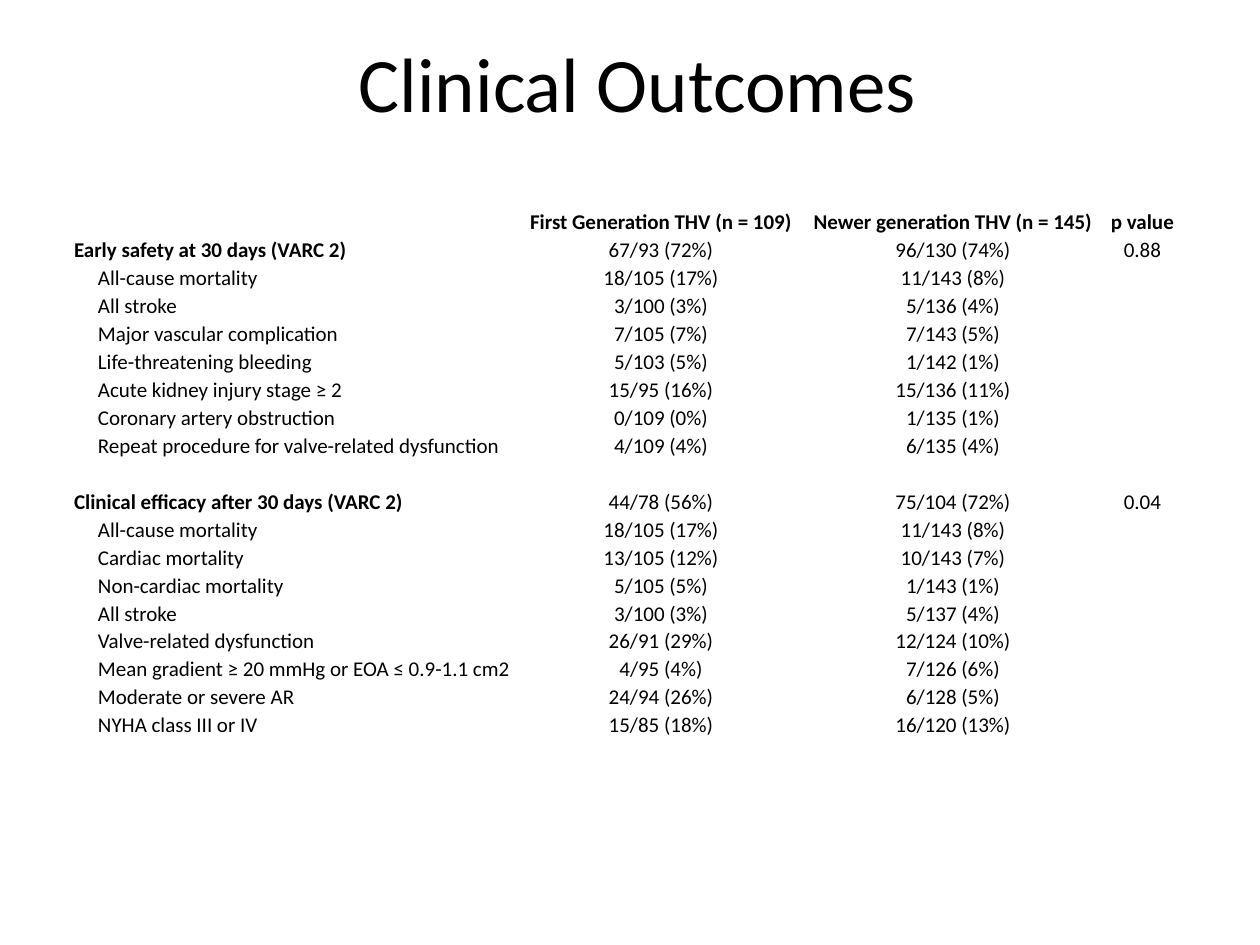
from lxml import etree
from pptx import Presentation
from pptx.dml.color import RGBColor
from pptx.enum.text import MSO_ANCHOR, PP_ALIGN
from pptx.oxml.ns import qn
from pptx.util import Pt

LEFT, CENTER = PP_ALIGN.LEFT, PP_ALIGN.CENTER
MIDDLE, BOTTOM = MSO_ANCHOR.MIDDLE, MSO_ANCHOR.BOTTOM
PX = 914400 // 126

TITLE = "Clinical Outcomes"
HEADER = ("", "First Generation THV (n = 109)", "Newer generation THV (n = 145)", "p value")
SECTIONS = [
    [
        ("Early safety at 30 days (VARC 2)", "67/93 (72%)", "96/130 (74%)", "0.88"),
        ("All-cause mortality", "18/105 (17%)", "11/143 (8%)", ""),
        ("All stroke", "3/100 (3%)", "5/136 (4%)", ""),
        ("Major vascular complication", "7/105 (7%)", "7/143 (5%)", ""),
        ("Life-threatening bleeding", "5/103 (5%)", "1/142 (1%)", ""),
        ("Acute kidney injury stage ≥ 2", "15/95 (16%)", "15/136 (11%)", ""),
        ("Coronary artery obstruction", "0/109 (0%)", "1/135 (1%)", ""),
        ("Repeat procedure for valve-related dysfunction", "4/109 (4%)", "6/135 (4%)", ""),
    ],
    [
        ("Clinical efficacy after 30 days (VARC 2)", "44/78 (56%)", "75/104 (72%)", "0.04"),
        ("All-cause mortality", "18/105 (17%)", "11/143 (8%)", ""),
        ("Cardiac mortality", "13/105 (12%)", "10/143 (7%)", ""),
        ("Non-cardiac mortality", "5/105 (5%)", "1/143 (1%)", ""),
        ("All stroke", "3/100 (3%)", "5/137 (4%)", ""),
        ("Valve-related dysfunction", "26/91 (29%)", "12/124 (10%)", ""),
        ("Mean gradient ≥ 20 mmHg or EOA ≤ 0.9-1.1 cm2", "4/95 (4%)", "7/126 (6%)", ""),
        ("Moderate or severe AR", "24/94 (26%)", "6/128 (5%)", ""),
        ("NYHA class III or IV", "15/85 (18%)", "16/120 (13%)", ""),
    ],
]
TABLE_LEFT, TABLE_TOP, ROW_HEIGHT = 73, 207, 28
COLUMN_WIDTHS = (442, 292, 292, 87)
CELL_MARGIN, INDENT = 1, 24


def px(length):
    return length * PX


def color(value):
    return RGBColor.from_string(value)


def format_paragraph(paragraph, size, alignment, bold=False):
    paragraph.alignment = alignment
    font = paragraph.font
    font.name, font.size, font.bold = "Calibri", Pt(size), bold
    font.color.rgb = color("000000")


def fill_cell(cell, text, alignment, bold, indent):
    cell.fill.background()
    cell.vertical_anchor = BOTTOM
    cell.margin_left = px(CELL_MARGIN + indent)
    cell.margin_right = cell.margin_top = px(CELL_MARGIN)
    cell.margin_bottom = 0
    cell.text = text
    paragraph = cell.text_frame.paragraphs[0]
    format_paragraph(paragraph, 12, alignment, bold)
    if not text:
        etree.SubElement(paragraph._p, qn("a:endParaRPr"), sz="1200")


def add_title(slide):
    title = slide.shapes.title
    title.left, title.top, title.width, title.height = px(-21), 0, px(1317), px(163)
    title.text_frame.text = TITLE
    title.text_frame.vertical_anchor = MIDDLE
    format_paragraph(title.text_frame.paragraphs[0], 44, CENTER)


def add_outcomes_table(slide):
    first, second = SECTIONS
    rows = [HEADER, *first, ("",) * len(HEADER), *second]
    headings = {section[0] for section in SECTIONS}
    table = slide.shapes.add_table(
        len(rows), len(HEADER), px(TABLE_LEFT), px(TABLE_TOP),
        px(sum(COLUMN_WIDTHS)), px(ROW_HEIGHT * len(rows))).table
    table.first_row = table.horz_banding = False
    for column, width in zip(table.columns, COLUMN_WIDTHS):
        column.width = px(width)
    for row_index, row in enumerate(rows):
        table.rows[row_index].height = px(ROW_HEIGHT)
        for column_index, text in enumerate(row):
            is_label = column_index == 0
            is_heading = is_label and row in headings
            fill_cell(
                table.cell(row_index, column_index), text,
                LEFT if is_label else CENTER,
                bold=is_heading or row is HEADER,
                indent=INDENT if is_label and not is_heading else 0)


def main():
    """Build the clinical outcomes slide."""
    presentation = Presentation()
    presentation.slide_width, presentation.slide_height = px(1260), px(945)
    slide = presentation.slides.add_slide(presentation.slide_layouts[5])
    add_outcomes_table(slide)
    add_title(slide)
    presentation.save("out.pptx")


if __name__ == "__main__":
    main()
